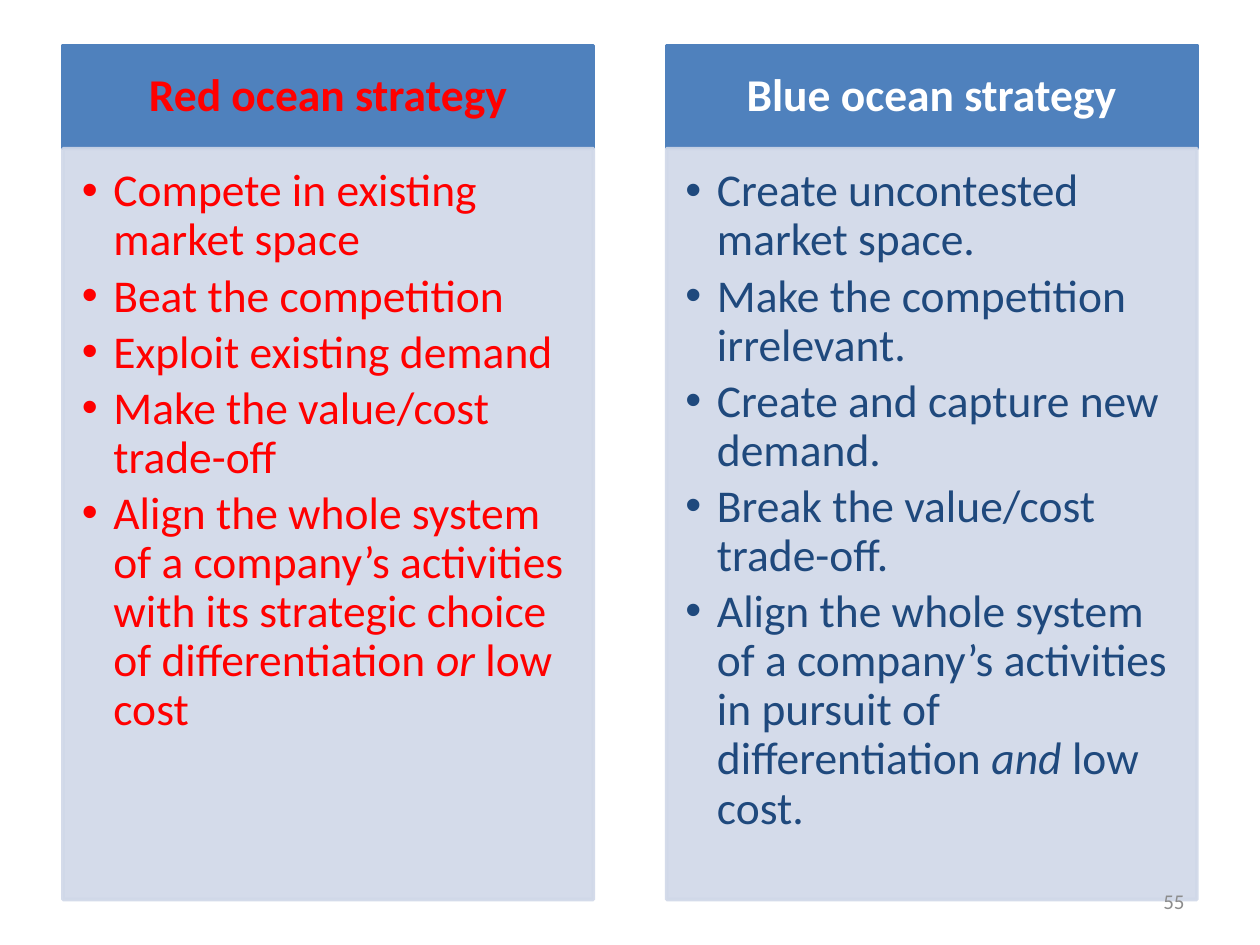
from lxml.etree import SubElement
from pptx import Presentation
from pptx.dml.color import RGBColor as RGB
from pptx.enum.shapes import MSO_SHAPE as Shape
from pptx.enum.text import MSO_ANCHOR as Anchor, PP_ALIGN as Align
from pptx.oxml.ns import qn
from pptx.util import Inches, Pt

COLORS = {"head": "4F81BD", "body": "D0D8E8", "red": "FF0000",
          "white": "FFFFFF", "navy": "1F497D", "gray": "8C8C8C"}

# Bullets are lists of text pieces; every second piece is italic.
COLUMNS = [
    ("Red ocean strategy", "red", "red", [
        ["Compete in existing market space"],
        ["Beat the competition"],
        ["Exploit existing demand"],
        ["Make the value/cost trade-off"],
        ["Align the whole system of a company’s activities with its "
         "strategic choice of differentiation ", "or ", "low cost"]]),
    ("Blue ocean strategy", "white", "navy", [
        ["Create uncontested market space."],
        ["Make the competition irrelevant."],
        ["Create and capture new demand."],
        ["Break the value/cost trade-off."],
        ["Align the whole system of a company’s activities in "
         "pursuit of differentiation ", "and ", "low cost."]]),
]
LEFT, TOP, WIDTH, STEP = 0.5, 0.36, 4.21, 4.79
HEAD, BODY = 0.82, 5.96


def add_box(left, top, height, color, anchor, insets):
    box = slide.shapes.add_shape(Shape.RECTANGLE, Inches(left), Inches(top),
                                 Inches(WIDTH), Inches(height))
    box.shadow.inherit = False
    box.fill.solid()
    box.line.width = Pt(2)
    for fill in (box.fill, box.line.fill):
        fill.solid()
        fill.fore_color.rgb = RGB.from_string(COLORS[color])
    frame = box.text_frame
    frame.word_wrap = True
    frame.vertical_anchor = anchor
    (frame.margin_left, frame.margin_top,
     frame.margin_right, frame.margin_bottom) = map(Inches, insets)
    return box


def style(run, size, color, bold=False, italic=False):
    font = run.font
    font.name, font.size = "Calibri", Pt(size)
    font.bold, font.italic = bold, italic
    font.color.rgb = RGB.from_string(COLORS[color])


deck = Presentation()
deck.slide_width, deck.slide_height = Inches(10), Inches(7.5)
slide = deck.slides.add_slide(deck.slide_layouts[6])

for col, (title, title_color, text_color, bullets) in enumerate(COLUMNS):
    left = LEFT + col * STEP
    head = add_box(left, TOP, HEAD, "head", Anchor.MIDDLE,
                   (0.2, 0.12, 0.2, 0.12))
    para = head.text_frame.paragraphs[0]
    para.text = title
    para.alignment = Align.CENTER
    para.line_spacing = 0.9
    style(para.runs[0], 26, title_color, bold=True)

    body = add_box(left, TOP + HEAD, BODY, "body", Anchor.TOP,
                   (0.15, 0.15, 0.2, 0.23))
    for tint in body._element.spPr.iter(qn("a:srgbClr")):
        SubElement(tint, qn("a:alpha"), val="90000")
    frame = body.text_frame
    for row, pieces in enumerate(bullets):
        para = frame.add_paragraph() if row else frame.paragraphs[0]
        para.level = 1
        para.alignment = Align.LEFT
        para.line_spacing = 0.9
        para.space_after = Pt(4)
        props = para._p.get_or_add_pPr()
        props.set("marL", str(Inches(0.25)))
        props.set("indent", str(-Inches(0.25)))
        SubElement(props, qn("a:buFont"), typeface="Arial")
        SubElement(props, qn("a:buChar"), char="•")
        for part, text in enumerate(pieces):
            run = para.add_run()
            run.text = text
            style(run, 26, text_color, italic=part % 2 == 1)

number = slide.shapes.add_textbox(Inches(7.17), Inches(6.95),
                                  Inches(2.33), Inches(0.4))
frame = number.text_frame
frame.word_wrap = True
frame.vertical_anchor = Anchor.MIDDLE
para = frame.paragraphs[0]
para.text = "55"
para.alignment = Align.RIGHT
style(para.runs[0], 12, "gray")

deck.save("out.pptx")
